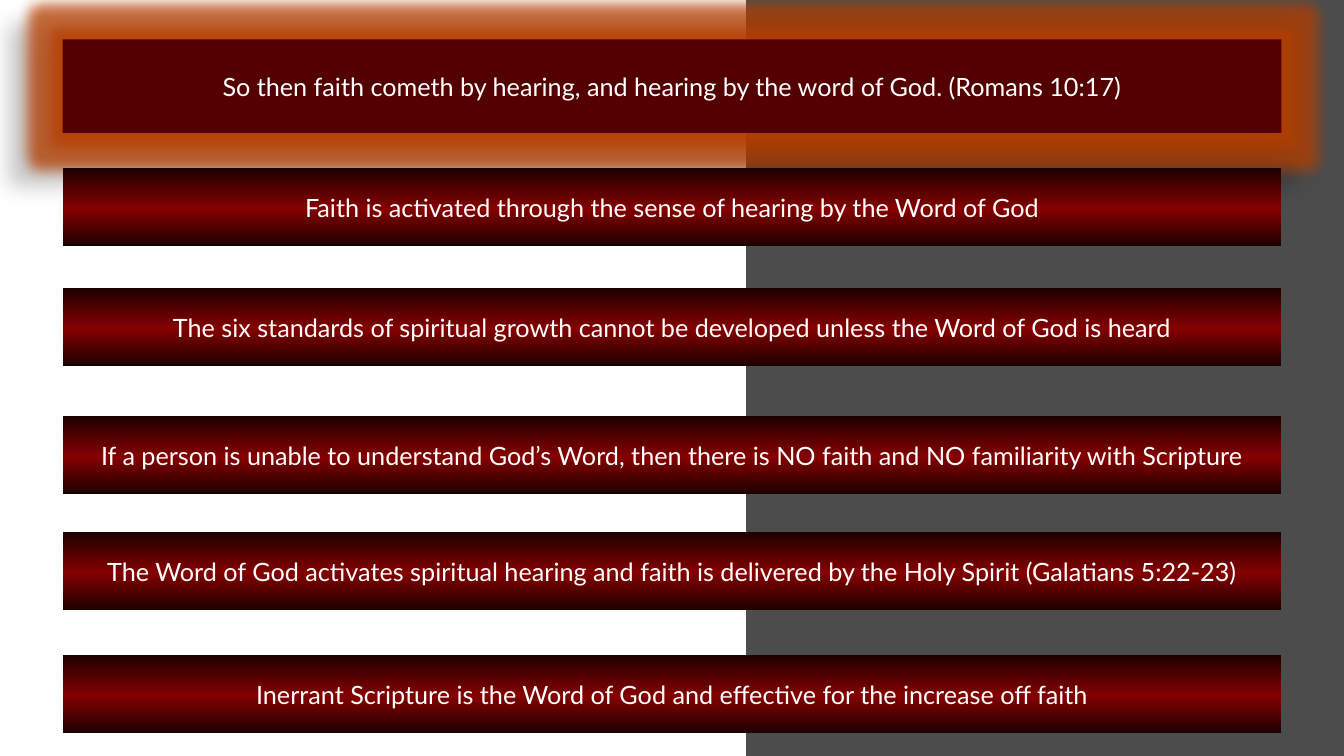
import pptx
import pptx.dml.color
import pptx.enum.shapes
import pptx.enum.text
import pptx.oxml
import pptx.oxml.ns
import pptx.util
from pptx.util import Inches

COLORS = {
    "panel": "000000",
    "verse": "540000",
    "edge": "1E0000",
    "center": "850001",
    "glow": "B53E00",
    "shadow": "000000",
    "text": "FFFFFF",
}
NS = pptx.oxml.ns.nsdecls("a")

prs = pptx.Presentation()
prs.slide_width = Inches(13.33)
prs.slide_height = Inches(7.5)
s = prs.slides.add_slide(prs.slide_layouts[6])


def add_bar(left, top, width, height, color, text=""):
    sp = s.shapes.add_shape(
        pptx.enum.shapes.MSO_SHAPE.RECTANGLE,
        Inches(left), Inches(top), Inches(width), Inches(height),
    )
    sp.shadow.inherit = False
    sp.line.fill.background()
    sp.fill.solid()
    sp.fill.fore_color.rgb = pptx.dml.color.RGBColor.from_string(COLORS[color])
    if text:
        tf = sp.text_frame
        tf.word_wrap = True
        tf.vertical_anchor = pptx.enum.text.MSO_ANCHOR.MIDDLE
        p = tf.paragraphs[0]
        p.text = text
        p.alignment = pptx.enum.text.PP_ALIGN.CENTER
        p.font.name = "Lato"
        p.font.size = pptx.util.Pt(18)
        p.font.color.rgb = pptx.dml.color.RGBColor.from_string(COLORS["text"])
    return sp


panel = add_bar(7.4, 0, 5.93, 7.5, "panel")
panel_color = panel.fill._xPr.find(".//" + pptx.oxml.ns.qn("a:srgbClr"))
panel_color.append(pptx.oxml.parse_xml(f'<a:alpha {NS} val="70000"/>'))

verse = add_bar(
    0.62, 0.39, 12.09, 0.93, "verse",
    "So then faith cometh by hearing, and hearing by the word of God. (Romans 10:17)",
)
effects = verse._element.spPr.find(pptx.oxml.ns.qn("a:effectLst"))
effects.append(pptx.oxml.parse_xml(
    f'<a:glow {NS} rad="{pptx.util.Pt(18)}"><a:srgbClr val="{COLORS["glow"]}">'
    '<a:alpha val="75000"/></a:srgbClr></a:glow>'
))
effects.append(pptx.oxml.parse_xml(
    f'<a:outerShdw {NS} blurRad="{pptx.util.Pt(11.8)}" dist="{pptx.util.Pt(19.7)}" '
    f'dir="{141 * 60000}" algn="ctr" rotWithShape="0">'
    f'<a:srgbClr val="{COLORS["shadow"]}"><a:alpha val="28000"/></a:srgbClr></a:outerShdw>'
))

points = [
    (1.67, "Faith is activated through the sense of hearing by the Word of God"),
    (2.86, "The six standards of spiritual growth cannot be developed unless the Word of God is heard"),
    (4.13, "If a person is unable to understand God’s Word, then there is NO faith and NO familiarity with Scripture"),
    (5.28, "The Word of God activates spiritual hearing and faith is delivered by the Holy Spirit (Galatians 5:22-23)"),
    (6.5, "Inerrant Scripture is the Word of God and effective for the increase off faith"),
]
stops = "".join(
    f'<a:gs pos="{pos * 1000}"><a:srgbClr val="{COLORS[name]}"/></a:gs>'
    for pos, name in [(0, "edge"), (52, "center"), (100, "edge")]
)
for top, text in points:
    bar = add_bar(0.62, top, 12.09, 0.77, "center", text)
    spPr = bar._element.spPr
    spPr.replace(
        spPr.find(pptx.oxml.ns.qn("a:solidFill")),
        pptx.oxml.parse_xml(
            f'<a:gradFill {NS} rotWithShape="1"><a:gsLst>{stops}</a:gsLst>'
            f'<a:lin ang="{90 * 60000}" scaled="0"/></a:gradFill>'
        ),
    )

prs.save("out.pptx")
